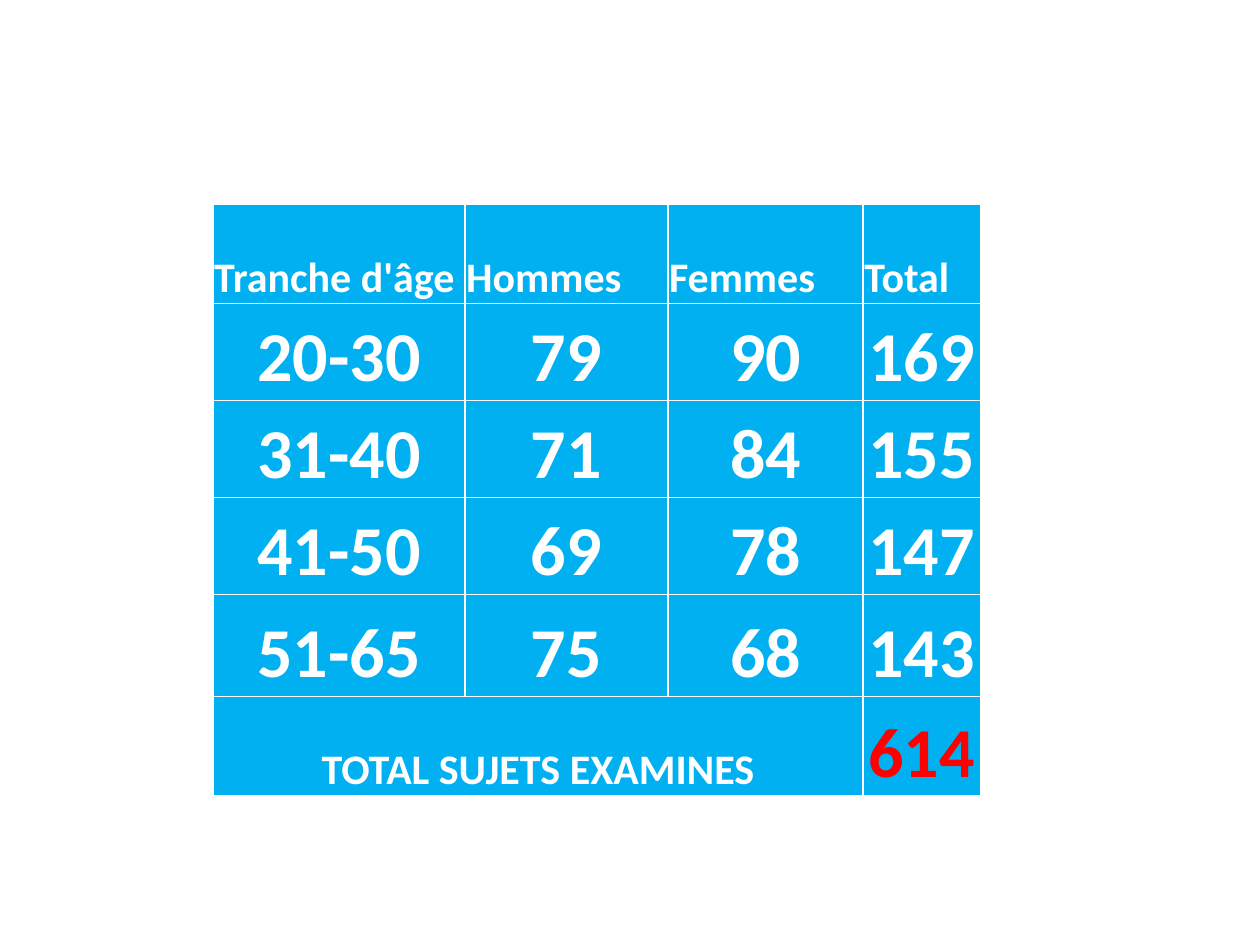
from lxml import etree
from pptx import Presentation
from pptx import util as u
from pptx.dml.color import RGBColor
from pptx.enum import text
from pptx.oxml.ns import qn

BLUE, WHITE, RED = "00B0F0", "FFFFFF", "FF0000"
LABEL_SIZE, FIGURE_SIZE = 24, 40


def colour(value):
    return RGBColor.from_string(value)


class Slide:
    """Holds the style and the current page."""

    font = "Calibri"

    def __init__(self, deck):
        self.page = deck.slides.add_slide(deck.slide_layouts[6])

    def table(self, left, top, widths, heights):
        frame = self.page.shapes.add_table(
            len(heights), len(widths), u.Inches(left), u.Inches(top),
            u.Inches(sum(widths)), u.Inches(sum(heights)))
        grid = frame.table
        for column, width in zip(grid.columns, widths):
            column.width = u.Inches(width)
        for row, height in zip(grid.rows, heights):
            row.height = u.Inches(height)
        for row in grid.rows:
            for cell in row.cells:
                self.cell_style(cell)
        return grid

    def cell_style(self, cell):
        cell.margin_left = cell.margin_right = cell.margin_top = u.Inches(0.01)
        cell.margin_bottom = 0
        cell.vertical_anchor = text.MSO_ANCHOR.BOTTOM
        # Borders come before the fill in the cell properties
        properties = cell._tc.get_or_add_tcPr()
        for side in ("a:lnL", "a:lnR", "a:lnT", "a:lnB"):
            line = etree.SubElement(properties, qn(side), w=str(u.Pt(1)))
            fill = etree.SubElement(line, qn("a:solidFill"))
            etree.SubElement(fill, qn("a:srgbClr"), val=WHITE)
        cell.fill.solid()
        cell.fill.fore_color.rgb = colour(BLUE)

    def cell_text(self, cell, words, size, align=text.PP_ALIGN.CENTER, ink=WHITE):
        para = cell.text_frame.paragraphs[0]
        para.alignment = align
        span = para.add_run()
        span.text = words
        span.font.name = self.font
        span.font.size = u.Pt(size)
        span.font.bold = True
        span.font.color.rgb = colour(ink)


def main():
    deck = Presentation()
    deck.slide_width, deck.slide_height = u.Inches(10), u.Inches(7.5)
    slide = Slide(deck)
    grid = slide.table(1.69, 1.62, [2, 1.61, 1.55, 0.93],
                       [0.79, 0.77, 0.77, 0.77, 0.81, 0.79])

    # Header row
    for col, words in enumerate(["Tranche d'âge", "Hommes", "Femmes", "Total"]):
        slide.cell_text(grid.cell(0, col), words, LABEL_SIZE, text.PP_ALIGN.LEFT)

    # Age groups, with the total of men and women
    groups = [("20-30", 79, 90), ("31-40", 71, 84),
              ("41-50", 69, 78), ("51-65", 75, 68)]
    for row, (ages, men, women) in enumerate(groups, start=1):
        for col, value in enumerate([ages, men, women, men + women]):
            slide.cell_text(grid.cell(row, col), str(value), FIGURE_SIZE)

    # Grand total
    last = len(groups) + 1
    grid.cell(last, 0).merge(grid.cell(last, 2))
    slide.cell_text(grid.cell(last, 0), "TOTAL SUJETS EXAMINES", LABEL_SIZE)
    total = sum(men + women for _, men, women in groups)
    slide.cell_text(grid.cell(last, 3), str(total), FIGURE_SIZE, ink=RED)

    deck.save("out.pptx")


if __name__ == "__main__":
    main()
